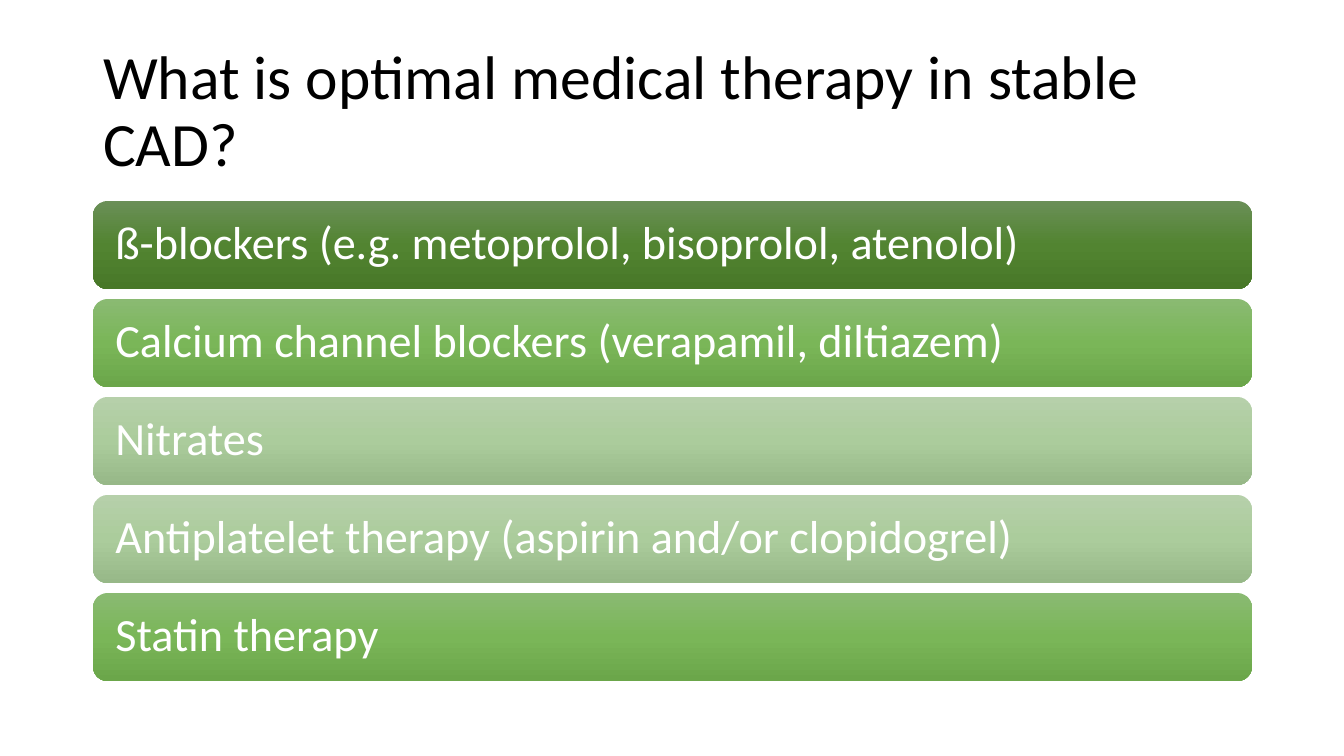
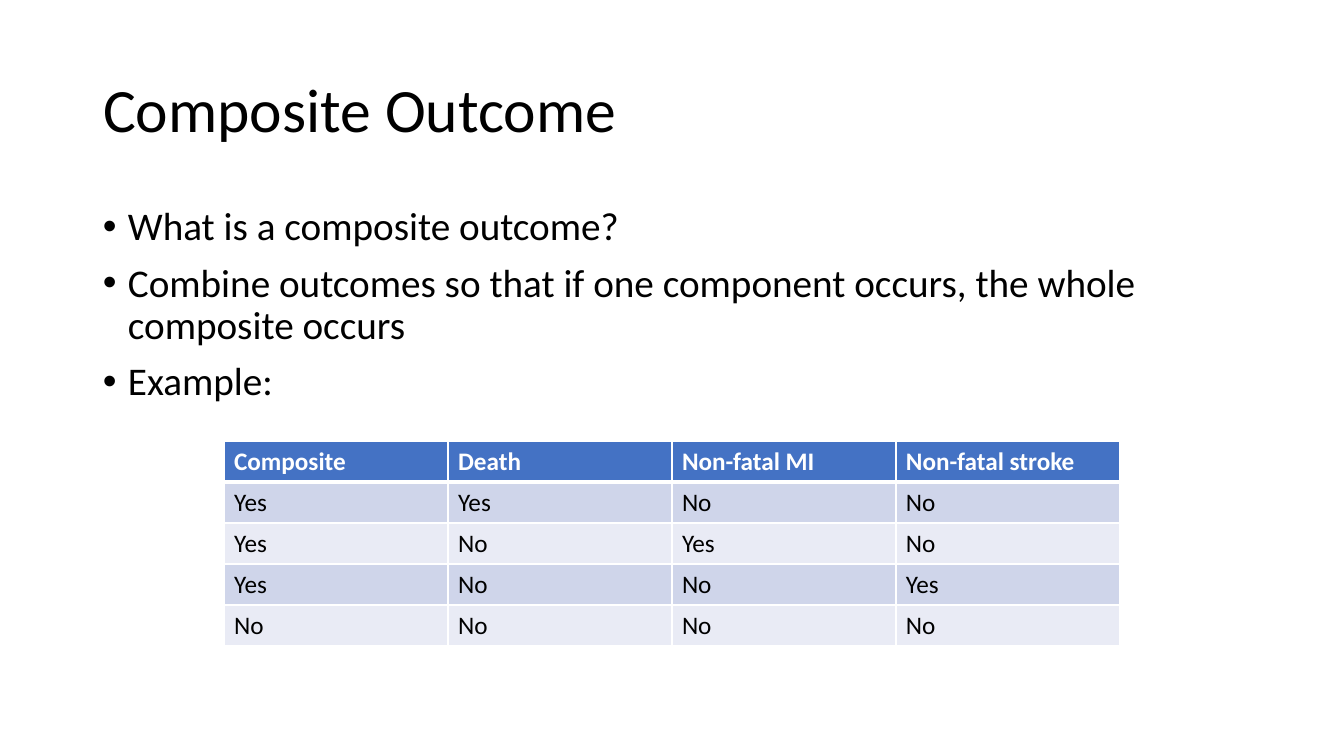
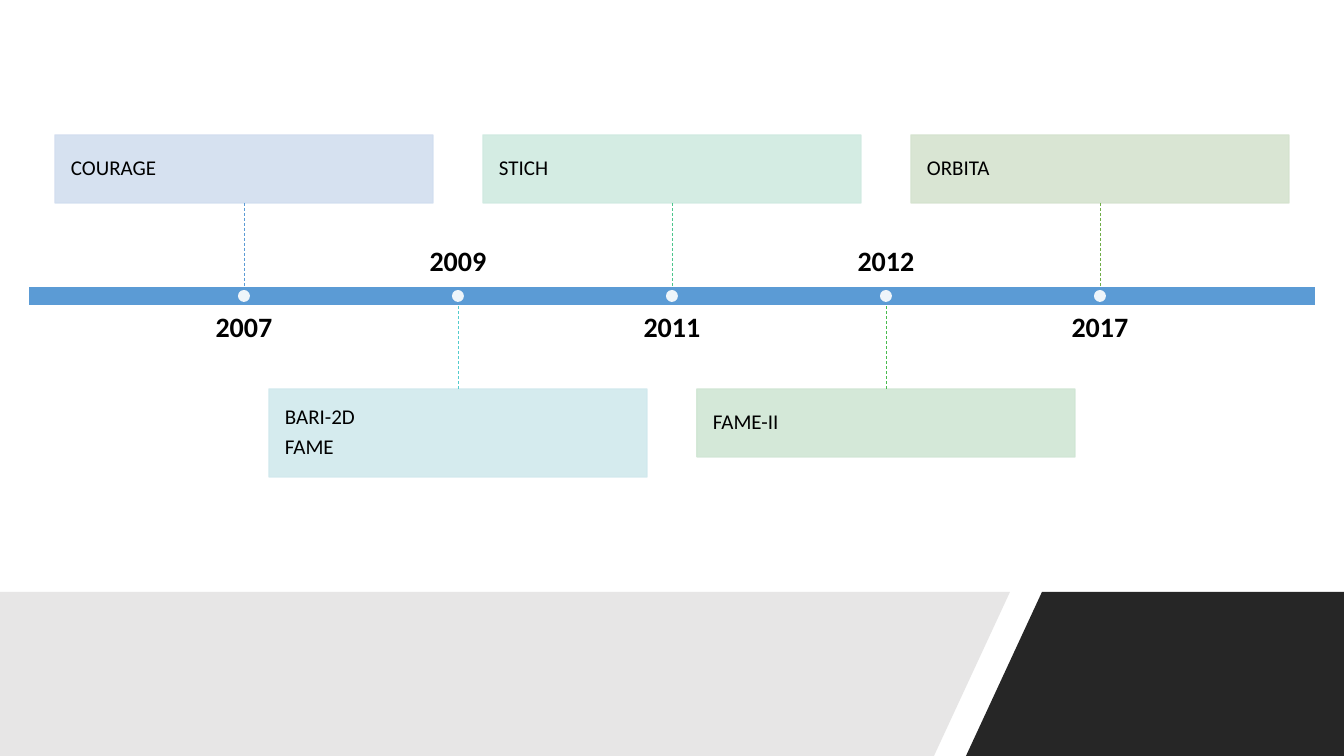
from copy import deepcopy
from lxml import etree
from pptx import Presentation
from pptx import util as u
from pptx.dml.color import RGBColor
from pptx.enum import dml, shapes, text
from pptx.oxml.ns import qn

PX = 9072  # EMU in one pixel
BLACK, WHITE = "000000", "FFFFFF"
rgb = RGBColor.from_string
LEFT, MID = text.PP_ALIGN.LEFT, text.PP_ALIGN.CENTER
ANCHOR = text.MSO_ANCHOR
SHAPE = shapes.MSO_SHAPE
INSETS = ["margin_left", "margin_right", "margin_top", "margin_bottom"]


def write(frame, lines, para, font, tone=BLACK, **form):
    """Put lines in a text frame and format them."""
    frame.text = "\n".join(lines)
    for key, val in {"word_wrap": True, **form}.items():
        setattr(frame, key, val)
    for par in frame.paragraphs:
        for key, val in para.items():
            setattr(par, key, val)
        for key, val in {"name": "Calibri", **font}.items():
            setattr(par.runs[0].font, key, val)
        par.runs[0].font.color.rgb = rgb(tone)


def add(slide, kind, area, fill, line=None):
    """Add a flat preset shape, its area in px."""
    item = slide.shapes.add_shape(kind, *[n * PX for n in area])
    item.shadow.inherit = False
    item.fill.solid()
    item.fill.fore_color.rgb = rgb(fill)
    if line:
        item.line.color.rgb = rgb(line)
        item.line.width = u.Pt(1)
    else:
        item.line.fill.background()
    return item


deck = Presentation()
deck.slide_width, deck.slide_height = 1344 * PX, 756 * PX

# Titled slides
titled = []
for name in ["What is optimal medical therapy in stable CAD?", "Composite Outcome"]:
    slide = deck.slides.add_slide(deck.slide_layouts[5])
    head = slide.shapes.title
    head.left, head.top, head.width, head.height = [n * PX for n in (93, 40, 1159, 146)]
    write(head.text_frame, [name], {"alignment": LEFT, "line_spacing": 0.9},
          {"size": u.Pt(44)}, vertical_anchor=ANCHOR.MIDDLE,
          auto_size=text.MSO_AUTO_SIZE.NONE)
    titled.append(slide)
drugs, outcome = titled

# Drug bars
DARK = ["6A8F57", "528431", "487828"]
GREEN = ["8ABA72", "7AB658", "6BA64A"]
PALE = ["B6D0AA", "ABCC9C", "97B888"]
bars = [
    ("ß-blockers (e.g. metoprolol, bisoprolol, atenolol)", DARK),
    ("Calcium channel blockers (verapamil, diltiazem)", GREEN),
    ("Nitrates", PALE),
    ("Antiplatelet therapy (aspirin and/or clopidogrel)", PALE),
    ("Statin therapy", GREEN),
]
for row, (label, tones) in enumerate(bars):
    bar = add(drugs, SHAPE.ROUNDED_RECTANGLE, (93, 201 + 98 * row, 1159, 88), tones[1])
    bar.fill.gradient()
    bar.fill.gradient_angle = 270
    stops = bar._element.spPr.find(".//" + qn("a:gsLst"))
    stops.append(deepcopy(stops[0]))
    for stop, pos, tone in zip(bar.fill.gradient_stops, (0, 0.5, 1), tones):
        stop.position = pos
        stop.color.rgb = rgb(tone)
    write(bar.text_frame, [label], {"alignment": LEFT, "line_spacing": 0.9},
          {"size": u.Pt(33)}, WHITE, vertical_anchor=ANCHOR.MIDDLE,
          **dict.fromkeys(INSETS, 18 * PX))

# Outcome bullets
body = outcome.shapes.add_textbox(*[n * PX for n in (93, 202, 1159, 480)])
write(body.text_frame, [
    "What is a composite outcome?",
    "Combine outcomes so that if one component occurs, the whole composite occurs",
    "Example:",
], {"line_spacing": 0.9, "space_before": u.Pt(10)}, {"size": u.Pt(28)})
for par in body.text_frame.paragraphs:
    props = par._p.get_or_add_pPr()
    props.set("marL", str(25 * PX))
    props.set("indent", str(-25 * PX))
    etree.SubElement(props, qn("a:buFont"), typeface="Arial")
    etree.SubElement(props, qn("a:buChar"), char="•")

# Outcome table
cells = [
    ["Composite", "Death", "Non-fatal MI", "Non-fatal stroke"],
    ["Yes", "Yes", "No", "No"],
    ["Yes", "No", "Yes", "No"],
    ["Yes", "No", "No", "Yes"],
    ["No", "No", "No", "No"],
]
area = [n * PX for n in (224, 441, 4 * 224, 5 * 41)]
table = outcome.shapes.add_table(5, 4, *area).table
for row, words in enumerate(cells):
    table.rows[row].height = 41 * PX
    for col, word in enumerate(words):
        cell = table.cell(row, col)
        write(cell.text_frame, [word], {}, {"size": u.Pt(18), "bold": row == 0},
              BLACK if row else WHITE)
        for side in "LRTB":
            thick = (row, side) in [(0, "B"), (1, "T")]
            edge = etree.SubElement(cell._tc.get_or_add_tcPr(), qn("a:ln" + side),
                                    w=str(u.Pt(3 if thick else 1)))
            fill = etree.SubElement(edge, qn("a:solidFill"))
            etree.SubElement(fill, qn("a:srgbClr"), val=WHITE)
        cell.fill.solid()
        cell.fill.fore_color.rgb = rgb(
            "4472C4" if row == 0 else "CFD5EA" if row % 2 else "E9EBF5")

# Timeline footer
trials = deck.slides.add_slide(deck.slide_layouts[6])
feet = [
    ("262626", [(1042, 592), (1344, 592), (1344, 756), (966, 756)]),
    ("E7E6E6", [(0, 592), (1010, 592), (934, 756), (0, 756)]),
]
for tone, points in feet:
    path = trials.shapes.build_freeform(*points[0], scale=PX)
    path.add_line_segments(points[1:], close=True)
    foot = path.convert_to_shape()
    foot.shadow.inherit = False
    foot.fill.solid()
    foot.fill.fore_color.rgb = rgb(tone)
    foot.line.fill.background()

# Timeline axis and events, by turns above and below
add(trials, SHAPE.RECTANGLE, (28, 286, 1288, 20), "5B9BD5", WHITE)
events = [
    ("2007", ["COURAGE"], "D2DEEF", "5B9BD5"),
    ("2009", ["BARI-2D", "FAME"], "D1E9ED", "54CCCD"),
    ("2011", ["STICH"], "D0EAE1", "4DC58D"),
    ("2012", ["FAME-II"], "D0E6D4", "48BB4F"),
    ("2017", ["ORBITA"], "D5E3CF", "70AD47"),
]
for num, (year, names, tone, dark) in enumerate(events):
    mid = 672 + 214 * (num - 2)
    low = num % 2 == 1
    date = trials.shapes.add_textbox(
        *[n * PX for n in (mid - 171, 223 if low else 313, 342, 55)])
    write(date.text_frame, [year], {"alignment": MID, "line_spacing": 0.9},
          {"size": u.Pt(20), "bold": True},
          vertical_anchor=ANCHOR.BOTTOM if low else ANCHOR.TOP,
          **dict.fromkeys(INSETS, 0))

    high = 48 + 20 * len(names)
    card = add(trials, SHAPE.RECTANGLE,
               (mid - 189, 389 if low else 135, 378, high), tone, tone)
    write(card.text_frame, names,
          {"alignment": LEFT, "line_spacing": 0.9, "space_after": u.Pt(5)},
          {"size": u.Pt(15)}, vertical_anchor=ANCHOR.MIDDLE,
          **dict.fromkeys(INSETS, 16 * PX))

    start, end = (389, 306) if low else (203, 286)
    stem = trials.shapes.add_connector(
        shapes.MSO_CONNECTOR.STRAIGHT, *[n * PX for n in (mid, start, mid, end)])
    stem.begin_connect(card, 0 if low else 2)
    stem.line.color.rgb = rgb(dark)
    stem.line.width = u.Pt(0.5)
    stem.line.dash_style = dml.MSO_LINE.DASH
    etree.SubElement(stem._element.spPr, qn("a:effectLst"))

    dot = add(trials, SHAPE.OVAL, (mid - 6, 290, 12, 12), WHITE)
    for item in (card, dot):
        for shade in item._element.spPr.iter(qn("a:srgbClr")):
            etree.SubElement(shade, qn("a:alpha"), val="90000")

deck.save("out.pptx")
